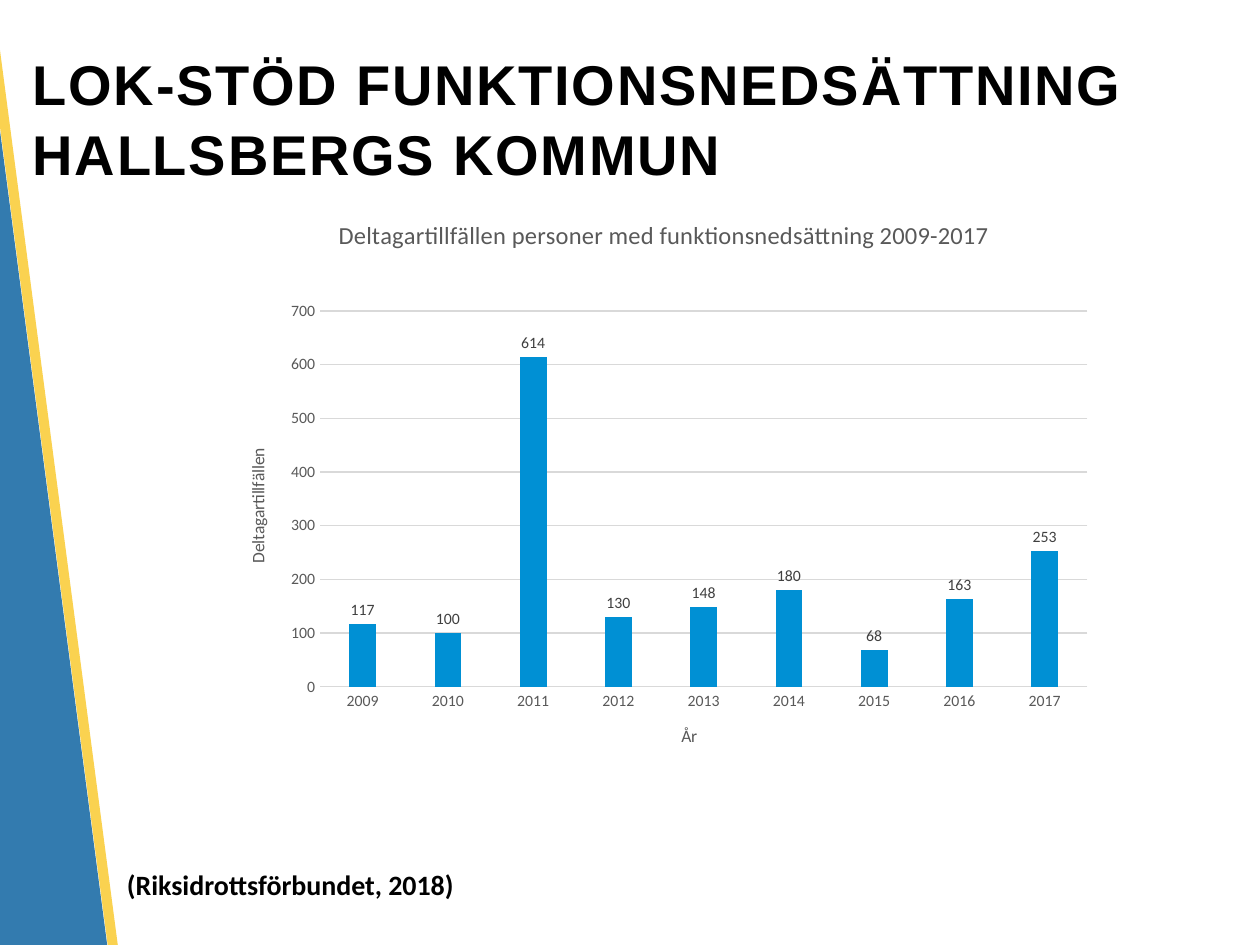
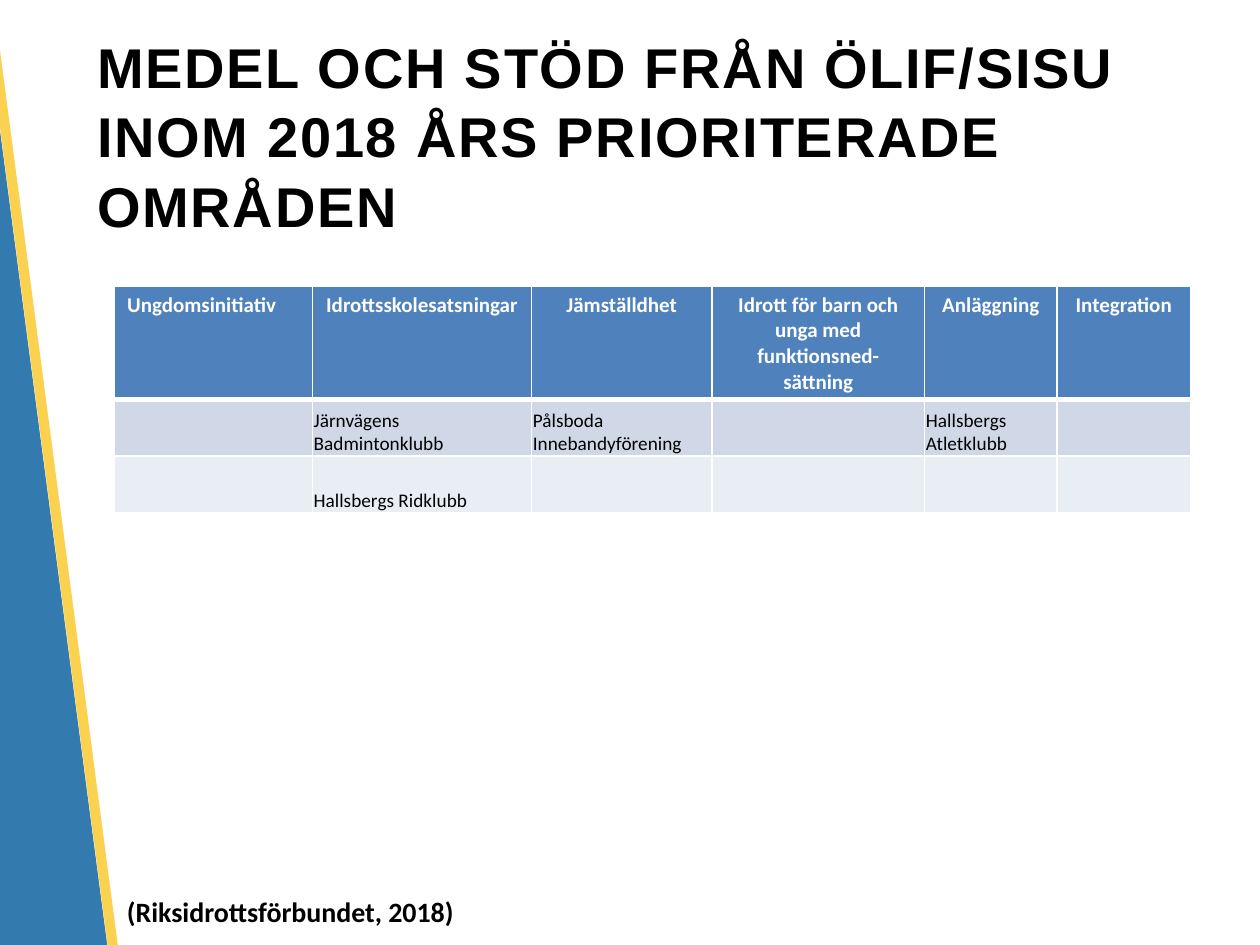
from dataclasses import dataclass

from lxml.etree import SubElement
from pptx import Presentation
from pptx.chart.data import CategoryChartData
from pptx.dml.color import RGBColor
from pptx.enum.chart import XL_CHART_TYPE, XL_LABEL_POSITION, XL_TICK_MARK
from pptx.enum.shapes import MSO_SHAPE
from pptx.enum.text import MSO_ANCHOR, MSO_AUTO_SIZE, PP_ALIGN
from pptx.oxml import parse_xml
from pptx.oxml.ns import nsdecls, qn
from pptx.util import Inches, Pt


@dataclass(frozen=True)
class Theme:
    title_font: str = "Arial"
    body_font: str = "Calibri"
    black: str = "000000"
    white: str = "FFFFFF"
    blue: str = "005B9C"
    yellow: str = "FAC828"
    bar: str = "0090D4"
    grid: str = "D9D9D9"
    axis_text: str = "595959"
    label_text: str = "404040"
    header_fill: str = "4F81BD"
    row_fills: tuple = ("D0D8E8", "E9EDF4")
    title_size: int = 32
    source_size: int = 16
    chart_title_size: int = 14
    header_size: int = 12
    cell_size: int = 11
    axis_title_size: int = 10
    label_size: int = 9


@dataclass(frozen=True)
class Band:
    left: float
    top: float
    width: float
    height: float
    color: str
    alpha: int


@dataclass(frozen=True)
class Heading:
    text: str
    left: float
    top: float
    width: float
    source_top: float


T = Theme()
BAND_ANGLE = 352.5
BANDS = (
    Band(-0.52, -1.64, 0.91, 11.33, T.blue, 80),
    Band(0.38, -1.77, 0.08, 11.32, T.yellow, 81),
)
SOURCE = "(Riksidrottsförbundet, 2018)"
SUPPORT = Heading("LOK-STÖD FUNKTIONSNEDSÄTTNING HALLSBERGS KOMMUN", 0.16, 0.3, 9.84, 6.84)
FUNDING = Heading("MEDEL OCH STÖD FRÅN ÖLIF/SISU INOM 2018 ÅRS PRIORITERADE OMRÅDEN", 0.67, 0.44, 8.65, 7.05)

YEARS = [str(year) for year in range(2009, 2018)]
ATTENDANCES = (117, 100, 614, 130, 148, 180, 68, 163, 253)

COLUMN_WIDTHS = (1.57, 1.74, 1.43, 1.69, 1.05, 1.06)
ROW_HEIGHTS = (0.9, 0.45, 0.45)
AREAS = (
    "Ungdomsinitiativ",
    "Idrottsskolesatsningar",
    "Jämställdhet",
    "Idrott för barn och unga med funktionsned-sättning",
    "Anläggning",
    "Integration",
)
CLUBS = (
    ("", "Järnvägens Badmintonklubb", "Pålsboda Innebandyförening", "", "Hallsbergs Atletklubb", ""),
    ("", "Hallsbergs Ridklubb", "", "", "", ""),
)


def style_font(font, size: float, color: str, bold: bool = False, name: str = T.body_font) -> None:
    font.name = name
    font.size = Pt(size)
    font.bold = bold
    font.color.rgb = RGBColor.from_string(color)


def add_bands(prs, s) -> None:
    tree = prs.slide_master.shapes.element
    for i, band in enumerate(BANDS):
        sp = s.shapes.add_shape(
            MSO_SHAPE.RECTANGLE, Inches(band.left), Inches(band.top), Inches(band.width), Inches(band.height)
        )
        sp.rotation = BAND_ANGLE
        sp.shadow.inherit = False
        sp.line.fill.background()
        sp.fill.solid()
        sp.fill.fore_color.rgb = RGBColor.from_string(band.color)
        color = sp.element.spPr.find(qn("a:solidFill"))[0]
        SubElement(color, qn("a:alpha"), val=str(band.alpha * 1000))
        sp.element.nvSpPr.cNvPr.set("id", str(100 + i))
        tree.insert(2 + i, sp.element)


def add_titled_slide(prs, heading: Heading):
    s = prs.slides.add_slide(prs.slide_layouts[5])
    title = s.shapes.title
    title.left, title.top = Inches(heading.left), Inches(heading.top)
    title.width, title.height = Inches(heading.width), Inches(1.25)
    tf = title.text_frame
    tf.text = heading.text
    tf.auto_size = MSO_AUTO_SIZE.NONE
    tf.vertical_anchor = MSO_ANCHOR.MIDDLE
    p = tf.paragraphs[0]
    p.alignment = PP_ALIGN.LEFT
    p.line_spacing = 1.04
    r = p.runs[0]
    style_font(r.font, T.title_size, T.black, True, T.title_font)
    r.font._element.set("spc", "100")

    source = s.shapes.add_textbox(Inches(0.91), Inches(heading.source_top), Inches(2.84), Inches(0.37))
    tf = source.text_frame
    tf.text = SOURCE
    tf.word_wrap = False
    tf.auto_size = MSO_AUTO_SIZE.SHAPE_TO_FIT_TEXT
    style_font(tf.paragraphs[0].runs[0].font, T.source_size, T.black, True)
    return s


def set_chart_text(owner, text: str, size: float) -> None:
    tf = owner.text_frame
    tf.text = text
    style_font(tf.paragraphs[0].runs[0].font, size, T.axis_text)


def style_axis(axis, title: str) -> None:
    set_chart_text(axis.axis_title, title, T.axis_title_size)
    axis.major_tick_mark = axis.minor_tick_mark = XL_TICK_MARK.NONE
    style_font(axis.tick_labels.font, T.label_size, T.axis_text)


def style_line(line) -> None:
    line.color.rgb = RGBColor.from_string(T.grid)
    line.width = Pt(0.75)


def set_plot_area(chart, x: float, y: float, w: float, h: float) -> None:
    area = chart._chartSpace.chart.plotArea
    for old in area.findall(qn("c:layout")):
        area.remove(old)
    area.insert(0, parse_xml(
        f'<c:layout {nsdecls("c")}><c:manualLayout><c:layoutTarget val="inner"/>'
        f'<c:xMode val="edge"/><c:yMode val="edge"/><c:x val="{x}"/><c:y val="{y}"/>'
        f'<c:w val="{w}"/><c:h val="{h}"/></c:manualLayout></c:layout>'
    ))


def add_attendance_chart(s) -> None:
    data = CategoryChartData()
    data.categories = YEARS
    data.add_series("Series 1", ATTENDANCES)
    chart = s.shapes.add_chart(
        XL_CHART_TYPE.COLUMN_CLUSTERED, Inches(1.77), Inches(1.55), Inches(7), Inches(4.59), data
    ).chart
    style_font(chart.font, T.axis_title_size, T.black)
    chart.has_legend = False
    set_chart_text(
        chart.chart_title, "Deltagartillfällen personer med funktionsnedsättning 2009-2017", T.chart_title_size
    )
    style_axis(chart.category_axis, "År")
    style_line(chart.category_axis.format.line)
    style_axis(chart.value_axis, "Deltagartillfällen")
    chart.value_axis.format.line.fill.background()
    style_line(chart.value_axis.major_gridlines.format.line)
    chart.value_axis.minimum_scale, chart.value_axis.maximum_scale = 0, 700
    chart.value_axis.major_unit = 100
    set_plot_area(chart, 0.11, 0.2, 0.87, 0.65)

    plot = chart.plots[0]
    plot.vary_by_categories = False
    plot.gap_width, plot.overlap = 219, -27
    fill = plot.series[0].format.fill
    fill.solid()
    fill.fore_color.rgb = RGBColor.from_string(T.bar)
    plot.has_data_labels = True
    labels = plot.data_labels
    labels.show_value = True
    labels.position = XL_LABEL_POSITION.OUTSIDE_END
    style_font(labels.font, T.label_size, T.label_text)


def format_cell(cell, fill: str, bottom_width: float) -> None:
    tc_pr = cell._tc.get_or_add_tcPr()
    for side in "LRTB":
        width = bottom_width if side == "B" else 1
        ln = SubElement(tc_pr, qn(f"a:ln{side}"), w=str(Pt(width)))
        SubElement(SubElement(ln, qn("a:solidFill")), qn("a:srgbClr"), val=T.white)
    cell.fill.solid()
    cell.fill.fore_color.rgb = RGBColor.from_string(fill)


def fill_header(cell, text: str, alignment: PP_ALIGN) -> None:
    format_cell(cell, T.header_fill, 3)
    cell.text_frame.text = text
    p = cell.text_frame.paragraphs[0]
    p.alignment = alignment
    style_font(p.runs[0].font, T.header_size, T.white, True)


def fill_club(cell, text: str, fill: str) -> None:
    format_cell(cell, fill, 1)
    if not text:
        return
    cell.vertical_anchor = MSO_ANCHOR.BOTTOM
    cell.margin_left = cell.margin_right = cell.margin_top = Inches(0.01)
    cell.margin_bottom = 0
    cell.text_frame.text = text
    style_font(cell.text_frame.paragraphs[0].runs[0].font, T.cell_size, T.black)


def add_funding_table(s) -> None:
    table = s.shapes.add_table(
        len(ROW_HEIGHTS), len(AREAS), Inches(0.91), Inches(2.27),
        Inches(sum(COLUMN_WIDTHS)), Inches(sum(ROW_HEIGHTS)),
    ).table
    table.horz_banding = False
    for column, width in zip(table.columns, COLUMN_WIDTHS):
        column.width = Inches(width)
    for row, height in zip(table.rows, ROW_HEIGHTS):
        row.height = Inches(height)
    for col, area in enumerate(AREAS):
        fill_header(table.cell(0, col), area, PP_ALIGN.CENTER if col else PP_ALIGN.LEFT)
    for row, (clubs, fill) in enumerate(zip(CLUBS, T.row_fills), start=1):
        for col, club in enumerate(clubs):
            fill_club(table.cell(row, col), club, fill)


def main() -> None:
    prs = Presentation()
    prs.slide_width, prs.slide_height = Inches(10), Inches(7.5)
    s = add_titled_slide(prs, SUPPORT)
    add_bands(prs, s)
    add_attendance_chart(s)
    add_funding_table(add_titled_slide(prs, FUNDING))
    prs.save("out.pptx")


if __name__ == "__main__":
    main()
